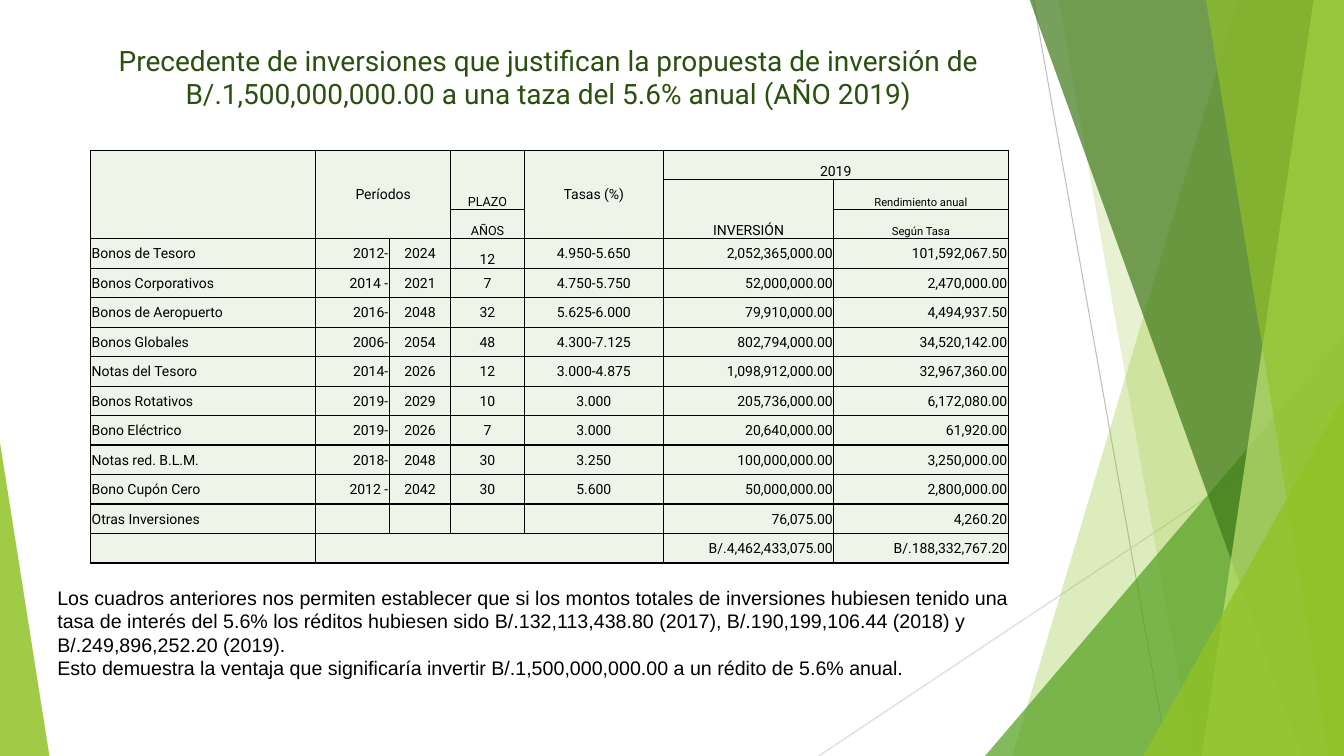
from lxml import etree
from pptx import Presentation
from pptx.dml.color import RGBColor
from pptx.enum.shapes import MSO_CONNECTOR, MSO_SHAPE
from pptx.enum.text import MSO_ANCHOR, MSO_AUTO_SIZE, PP_ALIGN
from pptx.oxml.ns import qn
from pptx.util import Inches, Pt

LEFT, CENTER, RIGHT = PP_ALIGN.LEFT, PP_ALIGN.CENTER, PP_ALIGN.RIGHT
TOP, MIDDLE, BOTTOM = MSO_ANCHOR.TOP, MSO_ANCHOR.MIDDLE, MSO_ANCHOR.BOTTOM
NO_FIT = MSO_AUTO_SIZE.NONE
TRIANGLE = MSO_SHAPE.ISOSCELES_TRIANGLE
STRAIGHT = MSO_CONNECTOR.STRAIGHT

TITLE = ("Precedente de inversiones que justifican la propuesta de inversión de "
         "B/.1,500,000,000.00 a una taza del 5.6% anual (AÑO 2019)")
NOTES = [
    "Los cuadros anteriores nos permiten establecer que si los montos totales de "
    "inversiones hubiesen tenido una tasa de interés del 5.6% los réditos hubiesen sido "
    "B/.132,113,438.80 (2017), B/.190,199,106.44 (2018) y B/.249,896,252.20 (2019).",
    "Esto demuestra la ventaja que significaría invertir B/.1,500,000,000.00 "
    "a un rédito de 5.6% anual.",
]
HEADERS = [
    (0, 1, "Períodos", 10, MIDDLE),
    (0, 3, "PLAZO", 9, BOTTOM),
    (0, 4, "Tasas (%)", 10, MIDDLE),
    (0, 5, "2019", 10, BOTTOM),
    (1, 5, "INVERSIÓN", 10, BOTTOM),
    (1, 6, "Rendimiento anual", 8, BOTTOM),
    (2, 3, "AÑOS", 9, BOTTOM),
    (2, 6, "Según Tasa", 8, BOTTOM),
]
BONDS = [
    ("Bonos de Tesoro", "2012-", "2024", "12", "4.950-5.650", "2,052,365,000.00", "101,592,067.50"),
    ("Bonos Corporativos", "2014 -", "2021", "7", "4.750-5.750", "52,000,000.00", "2,470,000.00"),
    ("Bonos de Aeropuerto", "2016-", "2048", "32", "5.625-6.000", "79,910,000.00", "4,494,937.50"),
    ("Bonos Globales", "2006-", "2054", "48", "4.300-7.125", "802,794,000.00", "34,520,142.00"),
    ("Notas del Tesoro", "2014-", "2026", "12", "3.000-4.875", "1,098,912,000.00", "32,967,360.00"),
    ("Bonos Rotativos", "2019-", "2029", "10", "3.000", "205,736,000.00", "6,172,080.00"),
    ("Bono Eléctrico", "2019-", "2026", "7", "3.000", "20,640,000.00", "61,920.00"),
    ("Notas red. B.L.M.", "2018-", "2048", "30", "3.250", "100,000,000.00", "3,250,000.00"),
    ("Bono Cupón Cero", "2012 -", "2042", "30", "5.600", "50,000,000.00", "2,800,000.00"),
    ("Otras Inversiones", "", "", "", "", "76,075.00", "4,260.20"),
    ("", "", "", "", "", "B/.4,462,433,075.00", "B/.188,332,767.20"),
]
COLUMNS = [2.23, 0.73, 0.61, 0.73, 1.38, 1.69, 1.73]
ALIGNS = [LEFT, RIGHT, CENTER, CENTER, CENTER, RIGHT, RIGHT]
MERGES = [(0, 0, 2, 0), (0, 1, 2, 2), (0, 3, 1, 3), (0, 4, 2, 4),
          (0, 5, 0, 6), (1, 5, 2, 5), (13, 1, 13, 4)]
FIRST_BOND_ROW = 3


def rgb(value):
    return RGBColor.from_string(value)


class Deck:
    heading, body = "Roboto", "Arial"
    green, ink, cell_fill = "2A5010", "000000", "EEF4E8"

    def __init__(self):
        self.prs = Presentation()
        self.prs.slide_width, self.prs.slide_height = Inches(13.33), Inches(7.5)
        self.s = self.prs.slides.add_slide(self.prs.slide_layouts[5])

    def place(self, sp, box):
        sp.left, sp.top, sp.width, sp.height = (Inches(v) for v in box)

    def run(self, p, text, size, font, color, align=LEFT):
        p.alignment = align
        r = p.add_run()
        r.text = text
        r.font.size, r.font.name = Pt(size), font
        r.font.color.rgb = rgb(color)

    def title(self, text, box):
        sp = self.s.shapes.title
        self.place(sp, box)
        tf = sp.text_frame
        tf.word_wrap, tf.auto_size, tf.vertical_anchor = True, NO_FIT, TOP
        self.run(tf.paragraphs[0], text, 20, self.heading, self.green, CENTER)

    def text(self, lines, box):
        sp = self.s.shapes.add_textbox(*(Inches(v) for v in box))
        tf = sp.text_frame
        tf.word_wrap = True
        for i, line in enumerate(lines):
            p = tf.add_paragraph() if i else tf.paragraphs[0]
            self.run(p, line, 14, self.body, self.ink)

    def line(self, start, end, color):
        sp = self.s.shapes.add_connector(STRAIGHT, *(Inches(v) for v in start + end))
        sp.line.color.rgb, sp.line.width = rgb(color), Pt(0.75)
        etree.SubElement(sp._element.spPr, qn("a:effectLst"))

    def paint(self, sp, color, opacity):
        sp.shadow.inherit = False
        sp.line.fill.background()
        sp.fill.solid()
        sp.fill.fore_color.rgb = rgb(color)
        clr = sp._element.spPr.find(qn("a:solidFill")).find(qn("a:srgbClr"))
        etree.SubElement(clr, qn("a:alpha"), val=str(opacity * 1000))

    def band(self, top_left, bottom_left, bottom_right, color, opacity):
        edge = Inches(13.33)
        top, bottom = Inches(-0.01), Inches(7.5)
        fb = self.s.shapes.build_freeform(Inches(top_left), top)
        fb.add_line_segments([(edge, top), (bottom_right, bottom),
                              (Inches(bottom_left), bottom)], close=True)
        self.paint(fb.convert_to_shape(), color, opacity)

    def triangle(self, box, apex, color, opacity):
        sp = self.s.shapes.add_shape(TRIANGLE, *(Inches(v) for v in box))
        sp.adjustments[0] = apex
        self.paint(sp, color, opacity)

    def style_cell(self, cell):
        cell.margin_left = cell.margin_right = cell.margin_top = Inches(0.01)
        cell.margin_bottom = 0
        cell.vertical_anchor = MIDDLE
        cell.fill.solid()
        cell.fill.fore_color.rgb = rgb(self.cell_fill)
        tcPr = cell._tc.get_or_add_tcPr()
        for i, side in enumerate(("lnL", "lnR", "lnT", "lnB")):
            ln = etree.Element(qn("a:" + side), w=str(Pt(1)))
            fill = etree.SubElement(ln, qn("a:solidFill"))
            etree.SubElement(fill, qn("a:srgbClr"), val=self.ink)
            tcPr.insert(i, ln)
        p = cell.text_frame.paragraphs[0]
        etree.SubElement(p._p, qn("a:endParaRPr"), sz="1000")

    def cell_text(self, cell, text, size, align):
        self.run(cell.text_frame.paragraphs[0], text, size, self.heading, self.ink, align)

    def table(self, box):
        rows = FIRST_BOND_ROW + len(BONDS)
        frame = self.s.shapes.add_table(rows, len(COLUMNS), *(Inches(v) for v in box))
        table = frame.table
        table.first_row = table.horz_banding = False
        for column, width in zip(table.columns, COLUMNS):
            column.width = Inches(width)
        for row in table.rows:
            row.height = Inches(box[3] / rows)
        for cell in table.iter_cells():
            self.style_cell(cell)
        for top, left, bottom, right in MERGES:
            table.cell(top, left).merge(table.cell(bottom, right))
        for row, col, text, size, anchor in HEADERS:
            cell = table.cell(row, col)
            cell.vertical_anchor = anchor
            self.cell_text(cell, text, size, CENTER)
        for row, bond in enumerate(BONDS, FIRST_BOND_ROW):
            for col, text in enumerate(bond):
                if text:
                    self.cell_text(table.cell(row, col), text, 10, ALIGNS[col])
        table.cell(FIRST_BOND_ROW, 3).vertical_anchor = BOTTOM


def main():
    deck = Deck()
    edge = Inches(13.33)
    deck.line((10.25, 0), (11.58, 7.5), "BFBFBF")
    deck.line((13.33, 4.03), (8.12, 7.5), "D9D9D9")
    deck.band(12.28, 10.04, edge, "90C226", 30)
    deck.band(10.5, 11.83, edge, "90C226", 20)
    deck.triangle((9.77, 3.33, 3.56, 4.17), 1, "54A021", 72)
    deck.band(10.21, 12.91, edge, "3F7819", 70)
    deck.band(13.03, 11.92, edge, "C0E474", 70)
    deck.band(11.96, 13.18, edge, "90C226", 65)
    deck.triangle((11.34, 3.93, 1.99, 3.57), 1, "90C226", 80)
    deck.triangle((0, 4.39, 0.49, 3.11), 0, "90C226", 85)
    deck.title(TITLE, (0.74, 0.38, 9.4, 1.44))
    deck.table((0.9, 1.49, 9.09, 4.1))
    deck.text(NOTES, (0.47, 5.76, 9.95, 1.58))
    deck.prs.save("out.pptx")


if __name__ == "__main__":
    main()
